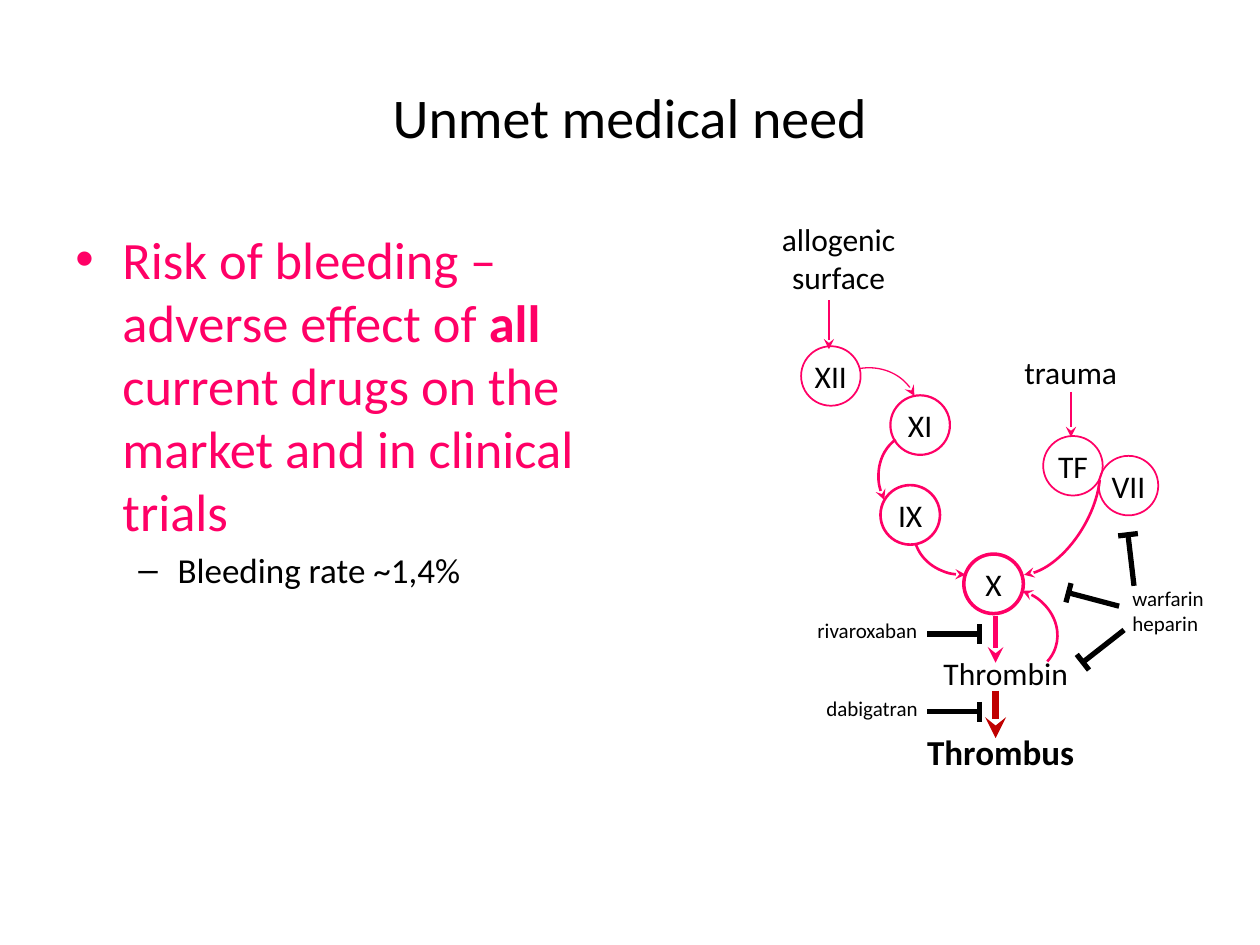
import math
from dataclasses import dataclass

from lxml import etree
from pptx import Presentation
from pptx.dml.color import RGBColor
from pptx.enum.shapes import MSO_CONNECTOR, MSO_SHAPE
from pptx.enum.text import MSO_ANCHOR, PP_ALIGN
from pptx.oxml.ns import qn
from pptx.util import Cm, Pt

STRAIGHT = MSO_CONNECTOR.STRAIGHT
ARC, OVAL = MSO_SHAPE.ARC, MSO_SHAPE.OVAL
LEFT, CENTER = PP_ALIGN.LEFT, PP_ALIGN.CENTER
MIDDLE = MSO_ANCHOR.MIDDLE


@dataclass(frozen=True)
class Theme:
    font: str = "Calibri"
    ink: RGBColor = RGBColor(0x00, 0x00, 0x00)
    accent: RGBColor = RGBColor(0xFF, 0x00, 0x66)
    clot: RGBColor = RGBColor(0xC0, 0x00, 0x00)
    title: int = 32
    bullet: int = 30
    strong: int = 20
    label: int = 18
    drug: int = 12


T = Theme()

TITLE = "Unmet medical need"
# Runs (text, bold), bullet, left margin, hanging indent, size, colour, space before
BULLETS = [
    ([("Risk of bleeding – adverse effect of ", False), ("all", True),
      (" current drugs on the market and in clinical trials", False)],
     "•", 0.95, 0.95, T.bullet, T.accent, 0),
    ([("Bleeding rate ~1,4%", False)], "–", 2.06, 0.79, T.strong, T.ink, 4),
]

# Positions and sizes below are in centimetres.
FACTOR_SIZE = 1.2
# Name, centre, line width
FACTORS = [
    ("XII", (16.75, 7.58), 1),
    ("XI", (18.55, 8.57), 1.25),
    ("IX", (18.35, 10.38), 1.5),
    ("X", (20.03, 11.77), 2),
    ("TF", (21.63, 9.39), 1),
    ("VII", (22.75, 9.79), 1),
]
ARC_HEIGHT = 1.75
# Centre, width, rotation, start and end angle, arrow end, line width
ARCS = [
    ((17.49, 8.29), 2, 354.4, 264.9, 347.5, "tailEnd", 0.75),
    ((18.61, 9.69), 2, 244.2, 269.5, 352, "headEnd", 1.5),
    ((19.42, 10.71), 2, 176.5, 270.6, 347.5, "headEnd", 1.5),
    ((21.09, 10.17), 3.12, 120, 215.5, 347.5, "tailEnd", 1.5),
    ((20.33, 12.74), 2, 18.3, 270.6, 19, "headEnd", 1.5),
]
# x, top, bottom, colour, line width
DOWN_ARROWS = [
    (16.71, 6.05, 7.04, T.accent, 0.75),
    (21.59, 7.9, 8.81, T.accent, 0.75),
    (20.07, 12.42, 13.36, T.accent, 3),
    (20.07, 13.92, 14.88, T.clot, 4),
]
CAP = 0.4
INHIBITOR_WIDTH = 3
# Start and blocked end of each inhibition bar
INHIBITORS = [
    ((18.69, 12.78), (19.74, 12.78)),
    ((18.69, 14.35), (19.74, 14.35)),
    ((22.66, 12.7), (21.83, 13.35)),
    ((22.56, 12.22), (21.54, 11.95)),
    ((22.86, 11.81), (22.74, 10.78)),
]
# Lines, box, size, bold, alignment
LABELS = [
    (["allogenic surface"], (14.91, 4.32, 3.99, 1.8), T.label, False, CENTER),
    (["trauma"], (20.4, 6.99, 2.59, 1.02), T.label, False, LEFT),
    (["Thrombin"], (18.77, 13.06, 3.33, 1.02), T.label, False, LEFT),
    (["Thrombus"], (17.98, 14.61, 4.39, 1.12), T.strong, True, CENTER),
    (["rivaroxaban"], (16.23, 12.32, 2.79, 0.76), T.drug, False, LEFT),
    (["dabigatran"], (16.41, 13.89, 2.51, 0.76), T.drug, False, LEFT),
    (["warfarin", "heparin"], (22.58, 11.68, 2.11, 1.27), T.drug, False, LEFT),
]


def style(font, size, color=T.ink, bold=False):
    font.name, font.size, font.bold = T.font, Pt(size), bold
    font.color.rgb = color


def set_line(sp, color, width, arrow=None):
    """Style an outline; arrow is headEnd or tailEnd."""
    sp.line.color.rgb = color
    sp.line.width = Pt(width)
    if arrow:
        etree.SubElement(sp.line._get_or_add_ln(), qn("a:" + arrow), type="stealth")


def add_line(s, start, end, color, width, arrow=None):
    sp = s.shapes.add_connector(STRAIGHT, *(Cm(v) for v in (*start, *end)))
    set_line(sp, color, width, arrow)
    etree.SubElement(sp._element.spPr, qn("a:effectLst"))


def add_outline(s, kind, center, width, height):
    """Add an unfilled shape placed by its centre."""
    x, y = center
    sp = s.shapes.add_shape(kind, Cm(x - width / 2), Cm(y - height / 2),
                            Cm(width), Cm(height))
    sp.shadow.inherit = False
    sp.fill.background()
    return sp


def add_text_box(s, box):
    tf = s.shapes.add_textbox(*(Cm(v) for v in box)).text_frame
    tf.word_wrap = True
    return tf


def add_title(s):
    sp = s.shapes.title
    sp.left, sp.top, sp.width, sp.height = Cm(1.27), Cm(0.76), Cm(22.86), Cm(3.18)
    tf = sp.text_frame
    tf.text = TITLE
    tf.vertical_anchor = MIDDLE
    p = tf.paragraphs[0]
    p.alignment = CENTER
    style(p.runs[0].font, T.title)


def add_bullets(s):
    tf = add_text_box(s, (1.27, 4.45, 11.84, 12.57))
    for i, (runs, mark, margin, hang, size, color, before) in enumerate(BULLETS):
        p = tf.paragraphs[0] if i == 0 else tf.add_paragraph()
        p.level = i
        p.space_before = Pt(before)
        pPr = p._p.get_or_add_pPr()
        pPr.set("marL", str(Cm(margin)))
        pPr.set("indent", str(-Cm(hang)))
        etree.SubElement(pPr, qn("a:buFont"), typeface="Arial")
        etree.SubElement(pPr, qn("a:buChar"), char=mark)
        for text, bold in runs:
            r = p.add_run()
            r.text = text
            style(r.font, size, color, bold)


def add_factor(s, name, center, width):
    sp = add_outline(s, OVAL, center, FACTOR_SIZE, FACTOR_SIZE)
    set_line(sp, T.accent, width)
    tf = sp.text_frame
    tf.word_wrap = False
    tf.margin_left = tf.margin_right = tf.margin_top = tf.margin_bottom = 0
    tf.vertical_anchor = MIDDLE
    tf.text = name
    tf.paragraphs[0].alignment = CENTER
    style(tf.paragraphs[0].runs[0].font, T.label)


def add_arc(s, center, width, rotation, start, end, arrow, weight):
    sp = add_outline(s, ARC, center, width, ARC_HEIGHT)
    sp.rotation = rotation
    for i, angle in enumerate((start, end)):
        sp.adjustments[i] = angle * 0.6  # 60000 units a degree, scaled by 100000
    set_line(sp, T.accent, weight, arrow)


def add_inhibitor(s, start, end):
    """Draw a stem with a cap at right angles across its end."""
    (x1, y1), (x2, y2) = start, end
    half = CAP / 2 / math.dist(start, end)
    dx, dy = (y1 - y2) * half, (x2 - x1) * half
    add_line(s, start, end, T.ink, INHIBITOR_WIDTH)
    add_line(s, (x2 - dx, y2 - dy), (x2 + dx, y2 + dy), T.ink, INHIBITOR_WIDTH)


def add_label(s, lines, box, size, bold, align):
    tf = add_text_box(s, box)
    tf.text = "\n".join(lines)
    for p in tf.paragraphs:
        p.alignment = align
        style(p.runs[0].font, size, bold=bold)


def main():
    prs = Presentation()
    prs.slide_width, prs.slide_height = Cm(25.4), Cm(19.05)
    s = prs.slides.add_slide(prs.slide_layouts[5])
    add_title(s)
    add_bullets(s)
    for factor in FACTORS:
        add_factor(s, *factor)
    for arc in ARCS:
        add_arc(s, *arc)
    for x, top, bottom, color, width in DOWN_ARROWS:
        add_line(s, (x, top), (x, bottom), color, width, "tailEnd")
    for start, end in INHIBITORS:
        add_inhibitor(s, start, end)
    for label in LABELS:
        add_label(s, *label)
    prs.save("out.pptx")


if __name__ == "__main__":
    main()
